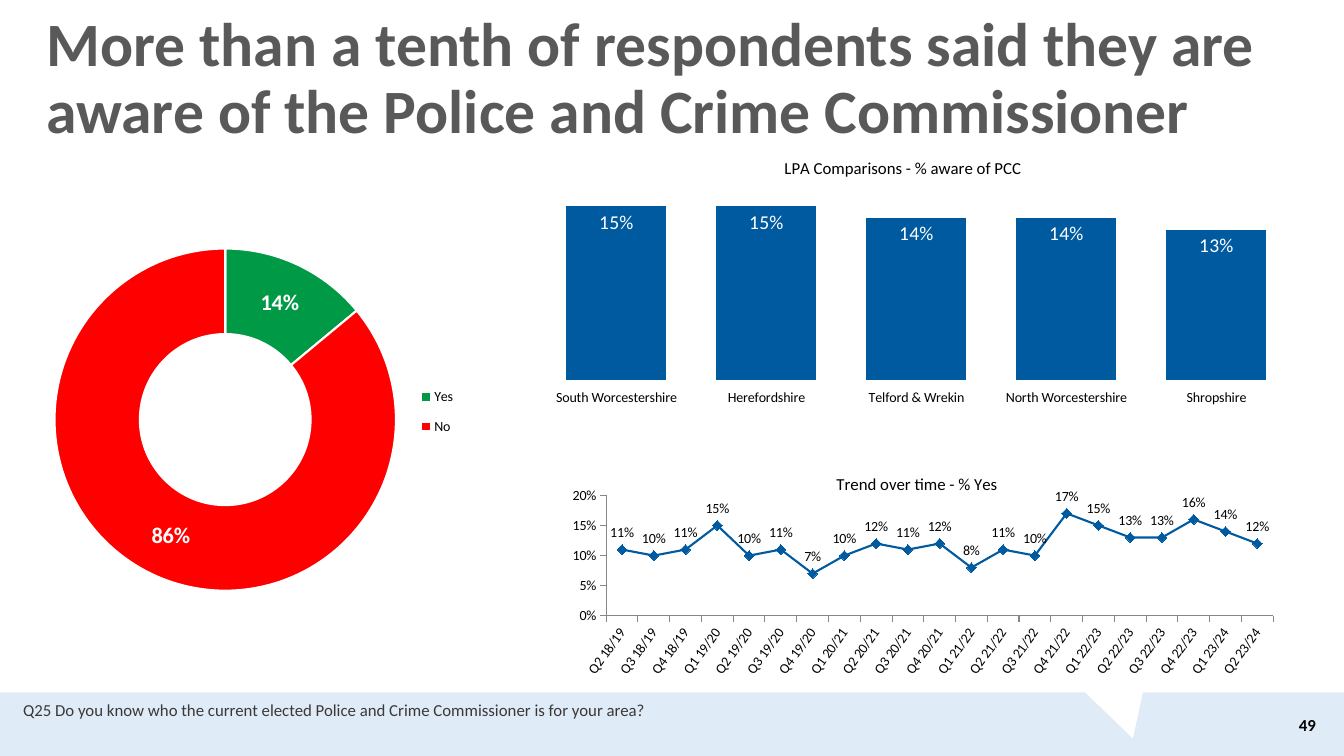
"""Build the slide on awareness of the Police and Crime Commissioner."""
from pptx import Presentation
from pptx import util as u
from pptx.chart import data as chart_data
from pptx.dml import color
from pptx.enum import chart as charts, shapes, text
from pptx.oxml import parse_xml, ns

COLORS = {
    "blue": "005AA0", "green": "009A46", "red": "FF0000", "pale": "DFEBF7",
    "white": "FFFFFF", "black": "000000", "title": "595959",
    "question": "3B3838", "axis": "868686",
}
FONT = "Calibri"
LPA_SHARES = {
    "South Worcestershire": 0.15, "Herefordshire": 0.15, "Telford & Wrekin": 0.14,
    "North Worcestershire": 0.14, "Shropshire": 0.13,
}
TREND = [0.11, 0.1, 0.11, 0.15, 0.1, 0.11, 0.07, 0.1, 0.12, 0.11, 0.12,
         0.08, 0.11, 0.1, 0.17, 0.15, 0.13, 0.13, 0.16, 0.14, 0.12]


def rgb(name):
    """Return a palette colour."""
    return color.RGBColor.from_string(COLORS[name])


def format_font(font, size, fill="black", bold=False):
    """Set face, size, colour and weight of a font."""
    font.name, font.size, font.bold = FONT, u.Pt(size), bold
    font.color.rgb = rgb(fill)


def write(frame, words, align=text.PP_ALIGN.LEFT, anchor=text.MSO_ANCHOR.TOP,
          spacing=None, **font):
    """Write one formatted paragraph into a text frame."""
    frame.word_wrap = True
    frame.auto_size = text.MSO_AUTO_SIZE.NONE
    frame.vertical_anchor = anchor
    paragraph = frame.paragraphs[0]
    paragraph.alignment, paragraph.line_spacing = align, spacing
    run = paragraph.add_run()
    run.text = words
    format_font(run.font, **font)


def place(chart, part, index, inner=False, **shares):
    """Give a chart part a manual layout in shares of the chart."""
    parent = chart.element.xpath(f".//c:{part}")[0]
    for old in parent.xpath("./c:layout"):
        parent.remove(old)
    target = '<c:layoutTarget val="inner"/>' if inner else ""
    modes = "".join(f'<c:{key}Mode val="edge"/>' for key in "xy")
    values = "".join(f'<c:{key} val="{value}"/>' for key, value in shares.items())
    parent.insert(index, parse_xml(
        f'<c:layout {ns.nsdecls("c")}><c:manualLayout>{target}{modes}{values}'
        "</c:manualLayout></c:layout>"))


def fill_solid(fill, name):
    """Fill with a palette colour."""
    fill.solid()
    fill.fore_color.rgb = rgb(name)


def quarters(count):
    """Name consecutive financial quarters from Q2 18/19."""
    return [f"Q{n % 4 + 1} {18 + n // 4}/{19 + n // 4}" for n in range(1, count + 1)]


class SlideBuilder:
    """Hold the slide and place elements in percent of its size."""

    def __init__(self, presentation):
        """Add a title-only slide."""
        self.width, self.height = presentation.slide_width, presentation.slide_height
        self.slide = presentation.slides.add_slide(presentation.slide_layouts[5])

    def box(self, left, top, width, height):
        """Convert percent shares into slide lengths."""
        return (int(left * self.width / 100), int(top * self.height / 100),
                int(width * self.width / 100), int(height * self.height / 100))

    def title(self, area, words, **style):
        """Move and write the title placeholder."""
        title = self.slide.shapes.title
        title.left, title.top, title.width, title.height = self.box(*area)
        write(title.text_frame, words, **style)

    def label(self, area, words, **style):
        """Add a text box."""
        write(self.slide.shapes.add_textbox(*self.box(*area)).text_frame, words, **style)

    def shape(self, area, kind, fill, rotation=0):
        """Add a plain filled shape."""
        shape = self.slide.shapes.add_shape(kind, *self.box(*area))
        shape.shadow.inherit = False
        shape.rotation = rotation
        fill_solid(shape.fill, fill)
        shape.line.fill.background()

    def chart(self, area, kind, categories, values, plot, title=None, title_at=None,
              label_size=10, label_fill="black", label_bold=False, label_position=None):
        """Add a single-series chart with percentage labels."""
        source = chart_data.CategoryChartData(number_format="0%")
        source.categories = categories
        source.add_series("Series 1", values)
        chart = self.slide.shapes.add_chart(kind, *self.box(*area), source).chart
        format_font(chart.font, 10)
        chart.has_legend = False
        chart.has_title = title is not None
        if title:
            write(chart.chart_title.text_frame, title, align=text.PP_ALIGN.CENTER, size=12)
            place(chart, "title", 1, x=title_at[0], y=title_at[1])
        place(chart, "plotArea", 0, inner=True, **dict(zip("xywh", plot)))
        chart.plots[0].vary_by_categories = kind == charts.XL_CHART_TYPE.DOUGHNUT
        labels = chart.plots[0].series[0].data_labels
        labels.show_value = True
        labels.number_format, labels.number_format_is_linked = "0%", False
        format_font(labels.font, label_size, label_fill, label_bold)
        if label_position is not None:
            labels.position = label_position
        return chart

    def doughnut(self, area, slices, **style):
        """Add a doughnut chart from (name, value, colour) slices."""
        names, values, fills = zip(*slices)
        chart = self.chart(area, charts.XL_CHART_TYPE.DOUGHNUT, names, values,
                           label_fill="white", **style)
        for index, fill in enumerate(fills):
            point = chart.plots[0].series[0].points[index]
            fill_solid(point.format.fill, fill)
            point.format.line.color.rgb = rgb("white")
            point.format.line.width = u.Pt(1.5)
        chart.has_legend = True
        chart.legend.position = charts.XL_LEGEND_POSITION.RIGHT
        chart.legend.include_in_layout = False
        format_font(chart.legend.font, 10)
        place(chart, "legend", 1, x=0.85, y=0.42, w=0.14, h=0.18)

    def columns(self, area, shares, **style):
        """Add a column chart without a visible value axis."""
        chart = self.chart(area, charts.XL_CHART_TYPE.COLUMN_CLUSTERED, list(shares),
                           list(shares.values()), label_fill="white",
                           label_position=charts.XL_LABEL_POSITION.INSIDE_END, **style)
        chart.plots[0].gap_width = 50
        fill_solid(chart.plots[0].series[0].format.fill, "blue")
        chart.category_axis.format.line.fill.background()
        axis = chart.value_axis
        axis.has_major_gridlines = axis.visible = False
        axis.minimum_scale, axis.maximum_scale = 0, 0.18

    def trend(self, area, values, **style):
        """Add a line chart with diamond markers."""
        chart = self.chart(area, charts.XL_CHART_TYPE.LINE_MARKERS, quarters(len(values)),
                           values, label_position=charts.XL_LABEL_POSITION.ABOVE, **style)
        series = chart.plots[0].series[0]
        series.smooth = False
        series.format.line.color.rgb = rgb("blue")
        series.format.line.width = u.Pt(1.5)
        series.marker.style, series.marker.size = charts.XL_MARKER_STYLE.DIAMOND, 7
        fill_solid(series.marker.format.fill, "blue")
        series.marker.format.line.color.rgb = rgb("blue")
        for axis in (chart.category_axis, chart.value_axis):
            format_font(axis.tick_labels.font, 10)
            axis.format.line.color.rgb = rgb("axis")
            axis.major_tick_mark = charts.XL_TICK_MARK.OUTSIDE
        label_body = chart.element.xpath(".//c:catAx/c:txPr/a:bodyPr")[0]
        label_body.set("rot", str(-54 * 60000))
        axis = chart.value_axis
        axis.has_major_gridlines = False
        axis.minimum_scale, axis.maximum_scale, axis.major_unit = 0, 0.2, 0.05
        axis.tick_labels.number_format = "0%"
        axis.tick_labels.number_format_is_linked = False


def main():
    """Build and save the slide."""
    presentation = Presentation()
    presentation.slide_width, presentation.slide_height = u.Inches(13.33), u.Inches(7.5)
    page = SlideBuilder(presentation)
    middle = text.MSO_ANCHOR.MIDDLE
    page.shape((0, 91.6, 100, 8.4), shapes.MSO_SHAPE.RECTANGLE, "pale")
    page.shape((80.65, 88.67, 5.78, 9.2), shapes.MSO_SHAPE.ISOSCELES_TRIANGLE, "white", 163.1)
    page.label((94.37, 93.2, 4.28, 5.33), "49", size=12, bold=True,
               align=text.PP_ALIGN.RIGHT, anchor=middle)
    page.label((0.98, 91.87, 58.59, 4), "Q25 Do you know who the current elected "
               "Police and Crime Commissioner is for your area?", size=12, fill="question")
    page.doughnut((3.98, 27.6, 31.06, 52.67), [("Yes", 0.14, "green"), ("No", 0.86, "red")],
                  plot=(0, 0.1, 0.82, 0.86), label_size=16, label_bold=True)
    page.title((2.7, 3.47, 96.25, 14.27), "More than a tenth of respondents said they are "
               "aware of the Police and Crime Commissioner", size=44, fill="title",
               bold=True, anchor=middle, spacing=0.9)
    page.columns((40.29, 19.07, 55.81, 40.53), LPA_SHARES, plot=(0, 0.09, 1, 0.68),
                 title="LPA Comparisons - % aware of PCC", title_at=(0.32, 0.03),
                 label_size=14)
    page.trend((40.74, 60, 54.54, 30.67), TREND, plot=(0.08, 0.18, 0.91, 0.52),
               title="Trend over time - % Yes", title_at=(0.39, 0.07))
    presentation.save("out.pptx")


if __name__ == "__main__":
    main()
